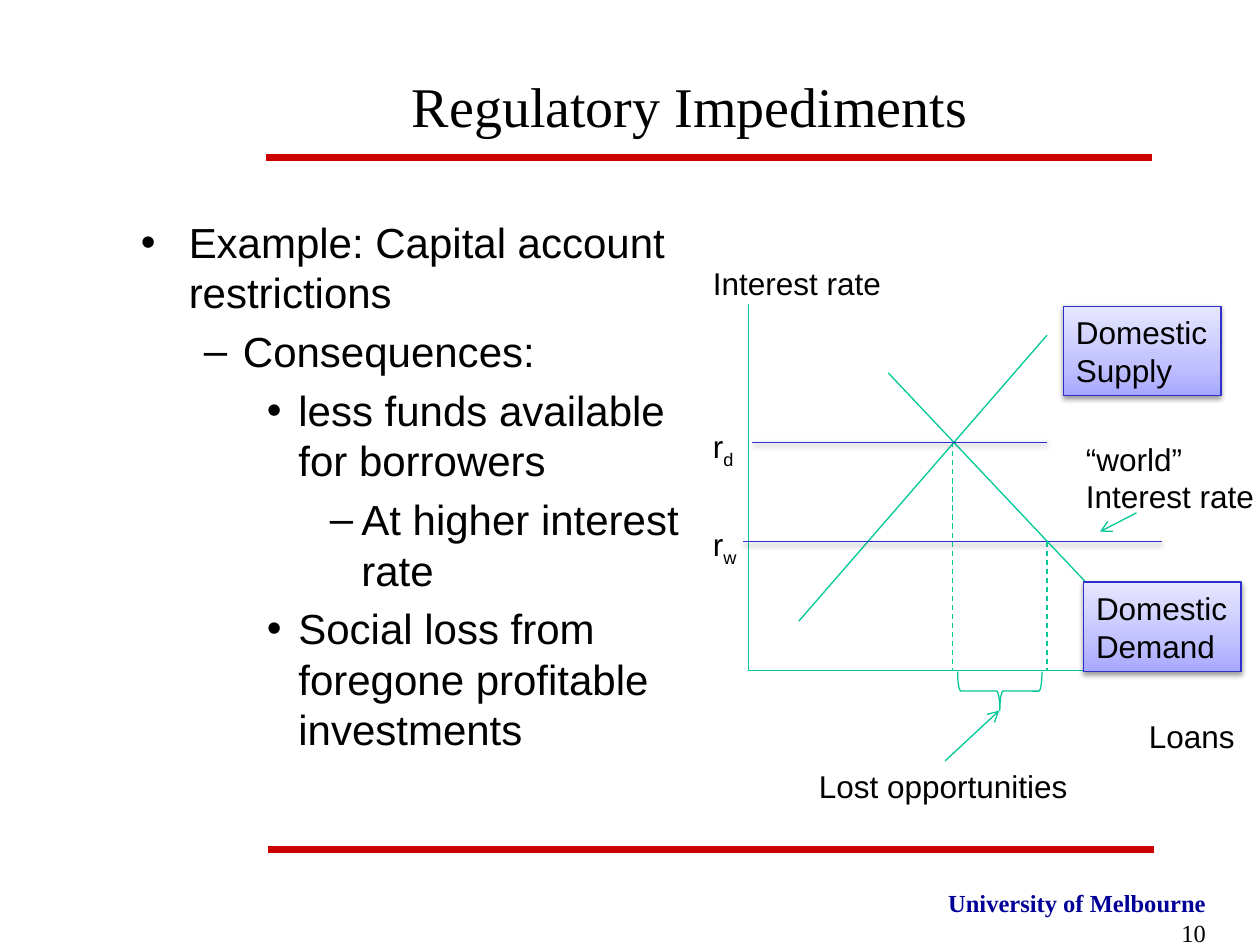
from copy import deepcopy

from lxml.etree import SubElement
from pptx import Presentation
from pptx.dml.color import RGBColor
from pptx.enum.dml import MSO_LINE
from pptx.enum.shapes import MSO_CONNECTOR, MSO_SHAPE
from pptx.enum.text import MSO_ANCHOR, MSO_AUTO_SIZE, PP_ALIGN
from pptx.oxml.ns import qn
from pptx.util import Inches, Pt

BLACK = RGBColor(0x00, 0x00, 0x00)
NAVY = RGBColor(0x00, 0x00, 0x99)
RED = RGBColor(0xCC, 0x00, 0x00)
GREEN = RGBColor(0x00, 0xC8, 0x96)
BLUE = RGBColor(0x2E, 0x2E, 0xCB)
BOX_STOPS = [
    (0, RGBColor(0xA7, 0xA7, 0xFF)),
    (0.35, RGBColor(0xC1, 0xC1, 0xFF)),
    (1, RGBColor(0xE7, 0xE7, 0xFF)),
]
SANS, SERIF = "Arial", "Times New Roman"

AXIS_X, AXIS_Y = 5.94, 5.32
R_D, R_W = 3.51, 4.3
LOANS_D, LOANS_W = 7.56, 8.31

BULLETS = [
    (0, "Example: Capital account restrictions"),
    (1, "Consequences:"),
    (2, "less funds available for borrowers"),
    (3, "At higher interest rate"),
    (2, "Social loss from foregone profitable investments"),
]
INDENTS = [(0.38, 0.38), (0.81, 0.31), (1.25, 0.25), (1.75, 0.25)]


def style(font, size, name=SANS, color=BLACK, bold=False):
    """Set the look of a run or paragraph font."""
    font.size, font.name, font.bold = Pt(size), name, bold
    font.color.rgb = color


def add_text(slide, left, top, width, height):
    """Add a wrapping text box and return its text frame."""
    s = slide.shapes.add_textbox(Inches(left), Inches(top), Inches(width), Inches(height))
    s.text_frame.word_wrap = True
    return s.text_frame


def fill_label(tf, text):
    """Put unwrapped label lines into a text frame."""
    tf.word_wrap = False
    tf.auto_size = MSO_AUTO_SIZE.SHAPE_TO_FIT_TEXT
    tf.text = text
    for p in tf.paragraphs:
        p.alignment = PP_ALIGN.LEFT
        for r in p.runs:
            style(r.font, 18)


def add_label(slide, left, top, width, text, height=0.4, sub=""):
    """Add a graph label with an optional subscript."""
    tf = add_text(slide, left, top, width, height)
    fill_label(tf, text)
    if sub:
        r = tf.paragraphs[0].add_run()
        r.text = sub
        style(r.font, 18)
        r.font._element.set("baseline", "-25000")


def set_effect(s, shadow=False):
    """Replace the theme effect with none or a soft drop shadow."""
    spPr = s._element.spPr
    for old in spPr.findall(qn("a:effectLst")):
        spPr.remove(old)
    effects = SubElement(spPr, qn("a:effectLst"))
    if shadow:
        outer = SubElement(effects, qn("a:outerShdw"), blurRad=str(Pt(3.1)),
                           dist=str(Pt(1.6)), dir="5400000", rotWithShape="0")
        color = SubElement(outer, qn("a:srgbClr"), val="000000")
        SubElement(color, qn("a:alpha"), val="38000")


def add_line(slide, start, end, color=GREEN, width=0.75, dashed=False, arrow=False, shadow=False):
    """Add a straight line between two points."""
    s = slide.shapes.add_connector(MSO_CONNECTOR.STRAIGHT, *map(Inches, start + end))
    s.line.color.rgb = color
    s.line.width = Pt(width)
    if dashed:
        s.line.dash_style = MSO_LINE.DASH
    if arrow:
        SubElement(s.line._get_or_add_ln(), qn("a:tailEnd"), type="arrow")
    set_effect(s, shadow)


def add_curve_box(slide, left, top, text):
    """Add a shaded box that names a curve."""
    s = slide.shapes.add_shape(MSO_SHAPE.RECTANGLE, Inches(left), Inches(top),
                               Inches(1.25), Inches(0.71))
    s.fill.gradient()
    s.fill.gradient_angle = 90
    stops = s._element.spPr.find(qn("a:gradFill")).find(qn("a:gsLst"))
    stops.insert(1, deepcopy(stops[0]))
    for stop, (position, color) in zip(s.fill.gradient_stops, BOX_STOPS):
        stop.position = position
        stop.color.rgb = color
    s.line.color.rgb = BLUE
    s.line.width = Pt(0.75)
    set_effect(s, shadow=True)
    fill_label(s.text_frame, text)


def add_brace(slide):
    """Add the brace that marks the lost loans."""
    s = slide.shapes.add_shape(MSO_SHAPE.RIGHT_BRACE, Inches(7.78), Inches(5.15),
                               Inches(0.31), Inches(0.67))
    s.rotation = 90
    s.fill.background()
    s.line.color.rgb = GREEN
    s.line.width = Pt(0.75)
    set_effect(s)


def add_frame(slide):
    """Add the title, the red rules and the footer."""
    tf = add_text(slide, 1.78, 0.42, 7.39, 0.83)
    tf.vertical_anchor = MSO_ANCHOR.MIDDLE
    tf.text = "Regulatory Impediments"
    p = tf.paragraphs[0]
    p.alignment = PP_ALIGN.CENTER
    style(p.runs[0].font, 32, SERIF)
    for left, y in [(2.11, 1.25), (2.13, 6.74)]:
        add_line(slide, (left, y), (left + 7.03, y), RED, 4)
    p = add_text(slide, 7.24, 7, 2.43, 0.5).paragraphs[0]
    p.alignment = PP_ALIGN.RIGHT
    for text, color, bold in [("University of Melbourne ", NAVY, True), ("10", BLACK, False)]:
        r = p.add_run()
        r.text = text
        style(r.font, 14, SERIF, color, bold)


def add_bullets(slide):
    """Add the nested bullet list."""
    tf = add_text(slide, 1.02, 1.67, 4.5, 5)
    for i, (level, text) in enumerate(BULLETS):
        p = tf.add_paragraph() if i else tf.paragraphs[0]
        p.text = text
        p.level = level
        if i:
            p.space_before = Pt(4.8)
        margin, hanging = INDENTS[level]
        pPr = p._p.get_or_add_pPr()
        pPr.set("marL", str(Inches(margin)))
        pPr.set("indent", str(-Inches(hanging)))
        SubElement(pPr, qn("a:buFont"), typeface=SANS)
        SubElement(pPr, qn("a:buChar"), char="–" if level % 2 else "•")
        style(p.runs[0].font, 24)


def add_graph(slide):
    """Add the loan market graph."""
    add_line(slide, (AXIS_X, 2.41), (AXIS_X, AXIS_Y))
    add_line(slide, (AXIS_X, AXIS_Y), (9.17, AXIS_Y))
    add_label(slide, 5.56, 2.05, 1.55, "Interest rate")
    add_label(slide, 9.02, 5.64, 0.89, "Loans")
    add_line(slide, (6.34, 4.93), (8.31, 2.66))
    add_curve_box(slide, 8.44, 2.43, "Domestic\nSupply")
    add_label(slide, 8.52, 3.44, 1.55, "“world”\nInterest rate", height=0.71)
    add_line(slide, (5.9, R_W), (9.22, R_W), BLUE, shadow=True)
    add_line(slide, (8.73, 4.74), (7.05, 2.96))
    add_curve_box(slide, 8.6, 4.62, "Domestic\nDemand")
    for x, rate in [(LOANS_D, R_D), (LOANS_W, R_W)]:
        add_line(slide, (x, rate), (x, AXIS_Y), dashed=True)
    add_brace(slide)
    add_label(slide, 6.4, 6.04, 2.19, "Lost opportunities")
    add_line(slide, (9.02, 4.07), (8.73, 4.22), arrow=True)
    add_line(slide, (5.97, R_D), (8.31, R_D), BLUE, shadow=True)
    add_label(slide, 5.56, 3.34, 0.38, "r", sub="d")
    add_label(slide, 5.56, 4.12, 0.41, "r", sub="w")
    add_line(slide, (7.5, 6.04), (7.93, 5.64), arrow=True)


def main():
    """Build and save the slide."""
    prs = Presentation()
    prs.slide_width, prs.slide_height = Inches(10), Inches(7.5)
    slide = prs.slides.add_slide(prs.slide_layouts[6])
    add_frame(slide)
    add_bullets(slide)
    add_graph(slide)
    prs.save("out.pptx")


if __name__ == "__main__":
    main()
